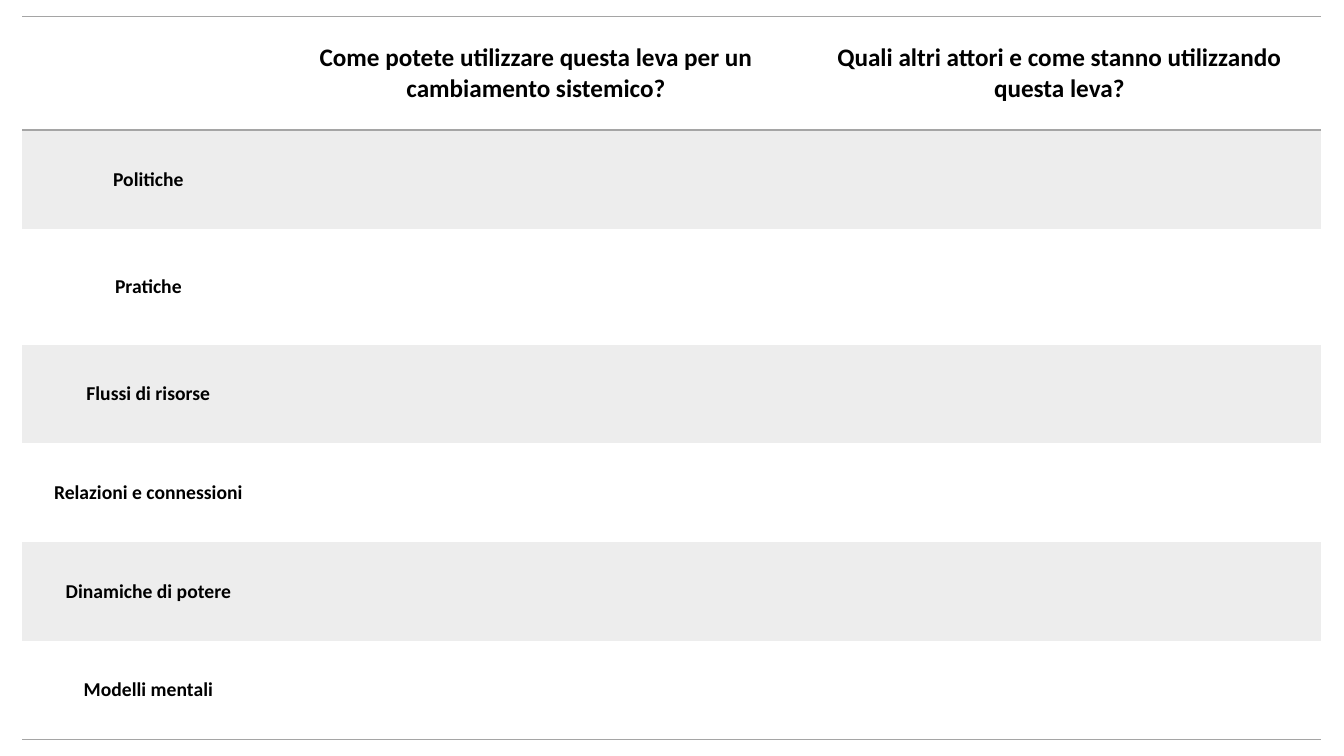
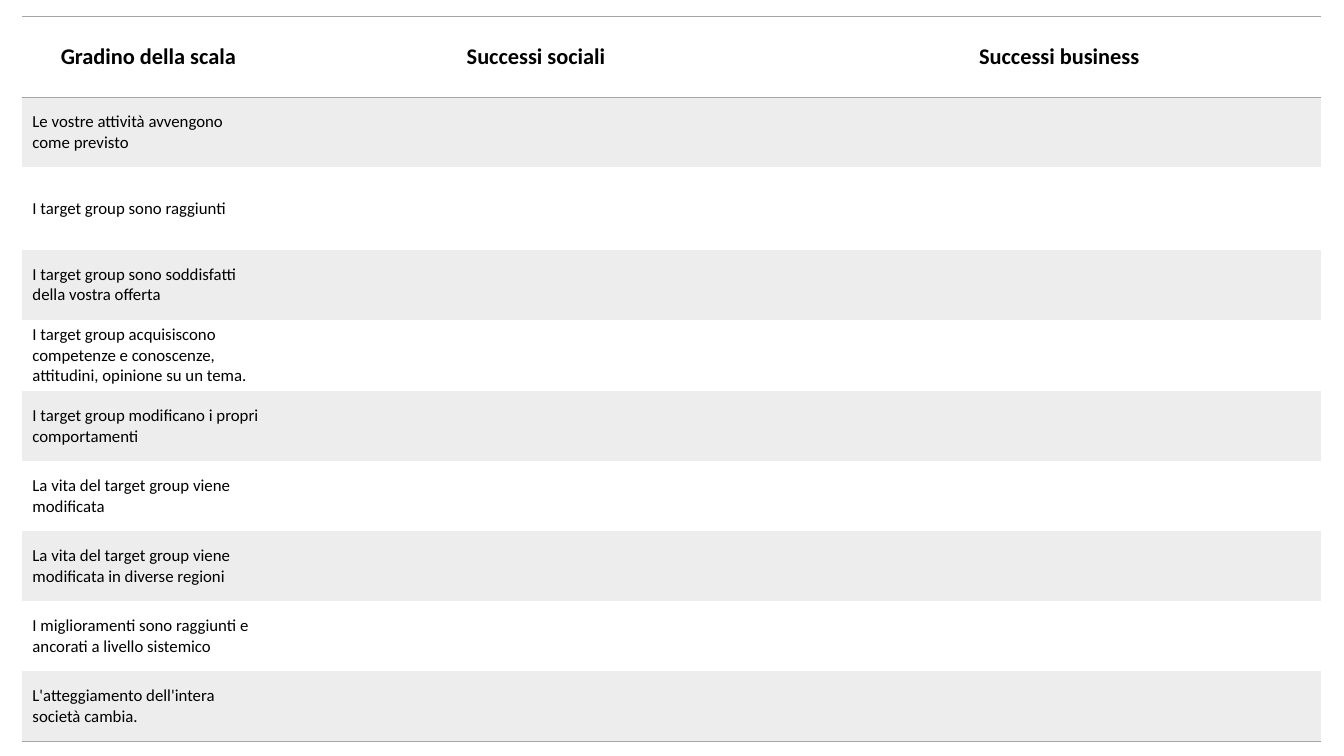
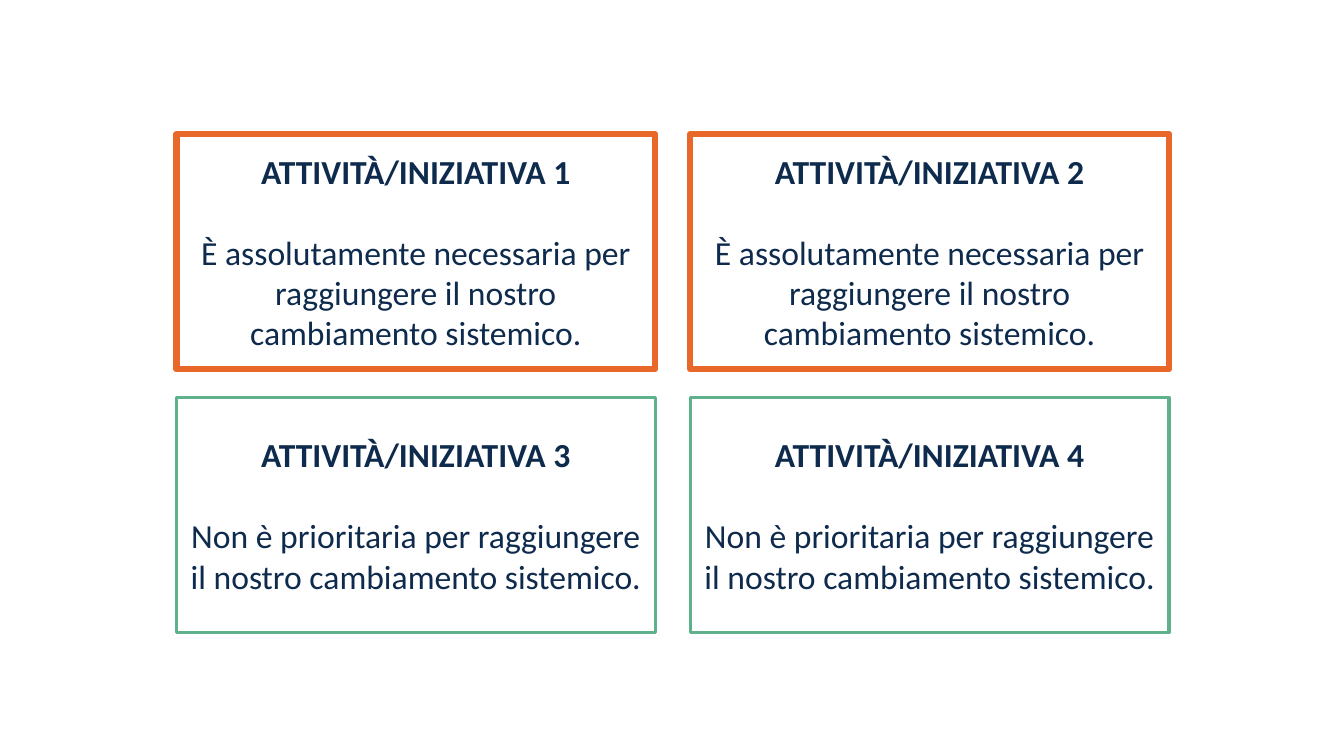
import pptx
import pptx.util
import pptx.dml.color
import pptx.enum.shapes
import pptx.enum.text
import pptx.oxml
import pptx.oxml.ns

Pt = pptx.util.Pt
ALIGN = pptx.enum.text.PP_ALIGN
MIDDLE = pptx.enum.text.MSO_ANCHOR.MIDDLE

FONT = "Calibri"
BLACK, WHITE, NAVY = "000000", "FFFFFF", "0E2B4D"
RULE, BAND = "A5A5A5", "EDEDED"
ORANGE, GREEN = "E76828", "5FB18B"
PLAIN = "{2D5ABB26-0587-4C30-8999-92F81FD0307C}"  # table style without grid

LEFT, TOP = 16, 11.5
COLS = (180, 373.8, 373.8)

LEVERS = ("Politiche", "Pratiche", "Flussi di risorse", "Relazioni e connessioni",
          "Dinamiche di potere", "Modelli mentali")
STEPS = (
    "Le vostre attività avvengono come previsto",
    "I target group sono raggiunti",
    "I target group sono soddisfatti della vostra offerta",
    "I target group acquisiscono competenze e conoscenze, attitudini, opinione su un tema.",
    "I target group modificano i propri comportamenti",
    "La vita del target group viene modificata",
    "La vita del target group viene modificata in diverse regioni",
    "I miglioramenti sono raggiunti e ancorati a livello sistemico",
    "L'atteggiamento dell'intera società cambia.",
)
NEEDED = "È assolutamente necessaria per raggiungere il nostro cambiamento sistemico."
MINOR = "Non è prioritaria per raggiungere il nostro cambiamento sistemico."


def rgb(code):
    return pptx.dml.color.RGBColor.from_string(code)


def write(para, text, size, color, bold, align):
    para.alignment = align
    run = para.add_run()
    run.text = text
    font = run.font
    font.name, font.size, font.bold = FONT, Pt(size), bold
    font.color.rgb = rgb(color)


def rule(cell, sides):
    """Draw thin lines on the named sides ("T", "B") of a cell."""
    props = cell._tc.get_or_add_tcPr()
    for spot, side in enumerate(sides):
        line = pptx.oxml.parse_xml(
            f'<a:ln{side} {pptx.oxml.ns.nsdecls("a")} w="{Pt(1)}"><a:solidFill>'
            f'<a:srgbClr val="{RULE}"/></a:solidFill></a:ln{side}>')
        props.insert(spot, line)


def grid(slide, left, top, heads, labels, heights, head, body):
    """Banded table; head is a text size, body is (size, bold, align)."""
    frame = slide.shapes.add_table(len(heights), len(COLS), Pt(left), Pt(top),
                                   Pt(sum(COLS)), Pt(sum(heights)))
    table = frame.table
    style = table._tbl.tblPr.find(pptx.oxml.ns.qn("a:tableStyleId"))
    style.text = PLAIN
    for col, width in zip(table.columns, COLS):
        col.width = Pt(width)
    for row, height in zip(table.rows, heights):
        row.height = Pt(height)

    last = len(labels)
    for r, row in enumerate(table.rows):
        for c, cell in enumerate(row.cells):
            cell.vertical_anchor = MIDDLE
            if r % 2:
                cell.fill.solid()
                cell.fill.fore_color.rgb = rgb(BAND)
            else:
                cell.fill.background()
            para = cell.text_frame.paragraphs[0]
            if r == 0:
                rule(cell, "TB")
                if heads[c]:
                    write(para, heads[c], head, BLACK, True, ALIGN.CENTER)
            elif c == 0:
                size, bold, align = body
                write(para, labels[r - 1], size, BLACK, bold, align)
            if r == last:
                rule(cell, "B")


def card(slide, left, top, width, height, title, text, color, weight):
    box = slide.shapes.add_shape(pptx.enum.shapes.MSO_SHAPE.RECTANGLE,
                                 Pt(left), Pt(top), Pt(width), Pt(height))
    box.shadow.inherit = False
    box.fill.solid()
    box.fill.fore_color.rgb = rgb(WHITE)
    box.line.color.rgb = rgb(color)
    box.line.width = Pt(weight)
    frame = box.text_frame
    frame.word_wrap = True
    frame.vertical_anchor = MIDDLE
    frame.margin_left = frame.margin_right = Pt(6)
    frame.margin_top = frame.margin_bottom = Pt(6)
    write(frame.paragraphs[0], title, 24, NAVY, True, ALIGN.CENTER)
    para = frame.add_paragraph()
    para.space_before = Pt(29)
    write(para, text, 24, NAVY, False, ALIGN.CENTER)


def cards(slide, left, top):
    """Two by two cards, one row for each priority."""
    width, height, gap_x, gap_y = 342, 168, 25, 20
    rows = ((NEEDED, ORANGE, 4.5), (MINOR, GREEN, 2.25))
    for r, (text, color, weight) in enumerate(rows):
        for c in range(2):
            card(slide, left + c * (width + gap_x), top + r * (height + gap_y),
                 width, height, f"ATTIVITÀ/INIZIATIVA {2 * r + c + 1}",
                 text, color, weight)


def main():
    deck = pptx.Presentation()
    deck.slide_width, deck.slide_height = Pt(960), Pt(540)
    blank = deck.slide_layouts[6]

    grid(deck.slides.add_slide(blank), LEFT, TOP,
         ("", "Come potete utilizzare questa leva per un cambiamento sistemico?",
          "Quali altri attori e come stanno utilizzando questa leva?"),
         LEVERS, [81.4, 70.5, 82.8] + [70.5] * 4, 18, (14, True, ALIGN.CENTER))
    grid(deck.slides.add_slide(blank), LEFT, TOP,
         ("Gradino della scala", "Successi sociali", "Successi business"),
         STEPS, [58, 50, 59] + [50] * 7, 16, (12, False, ALIGN.LEFT))
    cards(deck.slides.add_slide(blank), 126, 95.8)

    deck.save("out.pptx")


if __name__ == "__main__":
    main()
